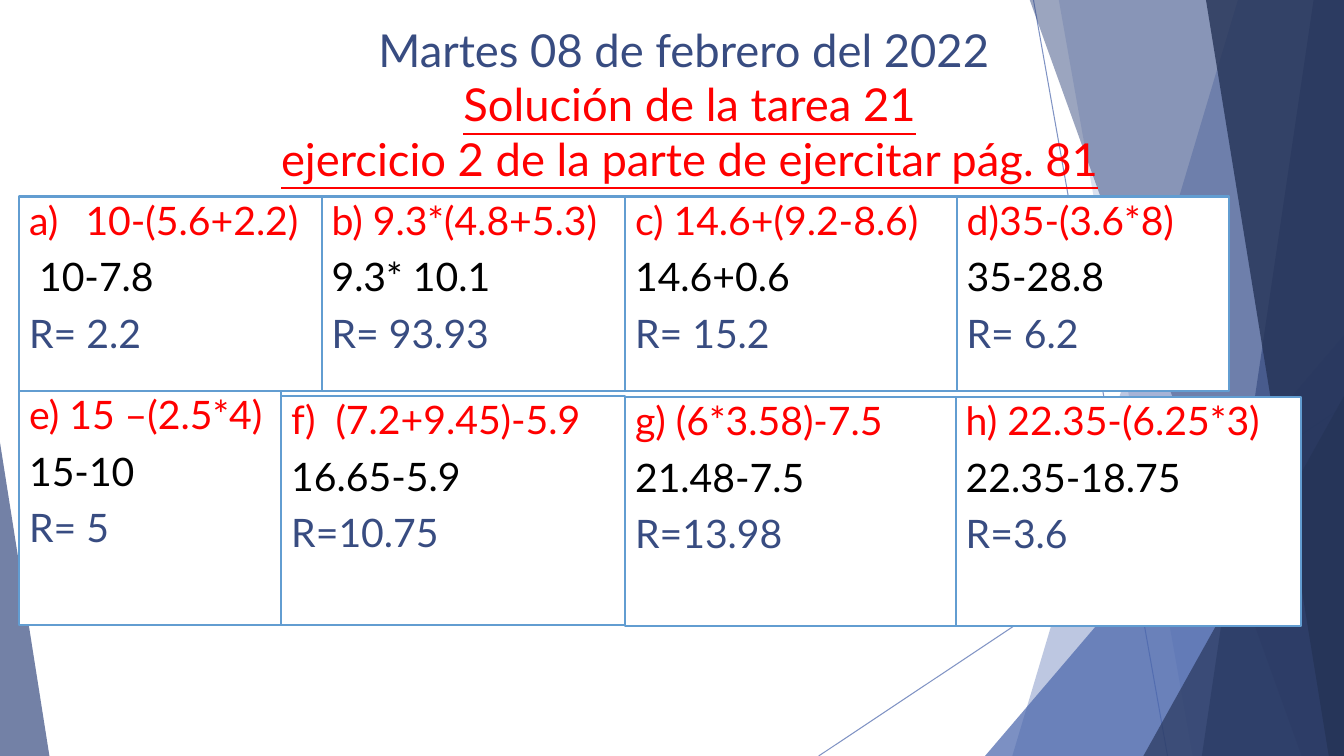
from dataclasses import dataclass
from itertools import pairwise

from lxml.etree import SubElement
from pptx import Presentation
from pptx.dml.color import RGBColor
from pptx.enum.shapes import MSO_CONNECTOR, MSO_SHAPE
from pptx.enum.text import MSO_ANCHOR, MSO_AUTO_SIZE, PP_ALIGN
from pptx.oxml.ns import qn
from pptx.util import Inches, Pt


@dataclass(frozen=True)
class Theme:
    font: str = "Lato"
    title_size: float = 32.4
    body_size: float = 28
    blue: str = "4A66AC"
    dark_blue: str = "384C81"
    navy: str = "253356"
    border: str = "629DD1"
    red: str = "FF0000"
    black: str = "000000"
    white: str = "FFFFFF"


THEME = Theme()
WIDTH, HEIGHT = 13.33, 7.5
BAND_TOP = -0.01

UPPER_EDGES = [0.19, 3.19, 6.2, 9.49, 12.19]
UPPER_EXERCISES = [
    (1.95, 3.88, ["10-(5.6+2.2)", " 10-7.8", "R= 2.2"]),
    (1.95, 3.88, ["b) 9.3*(4.8+5.3)", "9.3* 10.1", "R= 93.93"]),
    (1.95, 3.88, ["c) 14.6+(9.2-8.6)", "14.6+0.6", "R= 15.2"]),
    (1.95, 3.88, ["d)35-(3.6*8)", "35-28.8", "R= 6.2"]),
]
LOWER_EDGES = [0.19, 2.79, 6.2, 9.48, 12.9]
LOWER_EXERCISES = [
    (3.88, 6.2, ["e) 15 –(2.5*4)", "15-10", "R= 5"]),
    (3.93, 6.2, ["f)  (7.2+9.45)-5.9", "16.65-5.9", "R=10.75"]),
    (3.94, 6.21, ["g) (6*3.58)-7.5", "21.48-7.5", "R=13.98"]),
    (3.94, 6.21, ["h) 22.35-(6.25*3)", "22.35-18.75", "R=3.6"]),
]


def set_alpha(fill_parent, percent):
    color = fill_parent.find(".//" + qn("a:srgbClr"))
    SubElement(color, qn("a:alpha"), val=str(percent * 1000))


def fill_translucent(shape, color, percent):
    shape.shadow.inherit = False
    shape.fill.solid()
    shape.fill.fore_color.rgb = RGBColor.from_string(color)
    shape.line.fill.background()
    set_alpha(shape.element.spPr, percent)


def add_thin_line(page, start, end):
    line = page.shapes.add_connector(
        MSO_CONNECTOR.STRAIGHT, *(Inches(value) for value in start + end))
    line.line.color.rgb = RGBColor.from_string(THEME.blue)
    line.line.width = Pt(0.75)
    set_alpha(line.element.spPr, 70)
    SubElement(line.element.spPr, qn("a:effectLst"))


def add_band(page, top_left, bottom_left, color, percent):
    points = [(WIDTH, BAND_TOP), (WIDTH, HEIGHT), (bottom_left, HEIGHT)]
    builder = page.shapes.build_freeform(Inches(top_left), Inches(BAND_TOP))
    builder.add_line_segments(
        [(Inches(x), Inches(y)) for x, y in points], close=True)
    fill_translucent(builder.convert_to_shape(), color, percent)


def add_triangle(page, left, top, width, apex, color, percent):
    triangle = page.shapes.add_shape(
        MSO_SHAPE.ISOSCELES_TRIANGLE, Inches(left), Inches(top),
        Inches(width), Inches(HEIGHT - top))
    triangle.adjustments[0] = apex
    fill_translucent(triangle, color, percent)


def add_decoration(page):
    add_thin_line(page, (10.25, 0), (11.58, HEIGHT))
    add_thin_line(page, (WIDTH, 4.03), (8.12, HEIGHT))
    add_band(page, 12.28, 10.04, THEME.blue, 36)
    add_band(page, 10.5, 11.83, THEME.blue, 20)
    add_triangle(page, 9.77, 3.33, 3.56, 1, THEME.blue, 72)
    add_band(page, 10.21, 12.91, THEME.dark_blue, 50)
    add_band(page, 13.03, 11.92, THEME.dark_blue, 70)
    add_band(page, 11.96, 13.18, THEME.navy, 80)
    add_triangle(page, 11.34, 3.93, 1.99, 1, THEME.navy, 66)
    add_triangle(page, 0, 4.39, 0.49, 0, THEME.dark_blue, 70)


def add_span(para, text, size, color, underline=None):
    span = para.add_run()
    span.text = text
    span.font.name = THEME.font
    span.font.size = Pt(size)
    span.font.color.rgb = RGBColor.from_string(color)
    span.font.underline = underline


def number_with_letter(para):
    properties = para._p.get_or_add_pPr()
    properties.set("marL", str(Inches(0.56)))
    properties.set("indent", str(-Inches(0.56)))
    SubElement(properties, qn("a:buAutoNum"), type="alphaLcParenR")


def add_exercise(page, left, right, top, bottom, steps):
    box = page.shapes.add_shape(
        MSO_SHAPE.RECTANGLE, Inches(left), Inches(top),
        Inches(right - left), Inches(bottom - top))
    box.shadow.inherit = False
    box.fill.solid()
    box.fill.fore_color.rgb = RGBColor.from_string(THEME.white)
    box.line.color.rgb = RGBColor.from_string(THEME.border)
    box.line.width = Pt(1.5)
    frame = box.text_frame
    frame.word_wrap = True
    frame.vertical_anchor = MSO_ANCHOR.TOP
    colors = [THEME.red, THEME.black, THEME.dark_blue]
    for index, (step, color) in enumerate(zip(steps, colors)):
        para = frame.add_paragraph() if index else frame.paragraphs[0]
        para.alignment = PP_ALIGN.LEFT
        para.line_spacing = 0.9
        para.space_before = Pt(10)
        add_span(para, step, THEME.body_size, color)
    return box


def add_exercise_row(page, edges, exercises):
    return [add_exercise(page, left, right, *exercise)
            for (left, right), exercise in zip(pairwise(edges), exercises)]


def format_title(page):
    title = page.shapes.title
    title.left, title.top = Inches(2.14), Inches(0.17)
    title.width, title.height = Inches(9.4), Inches(1.44)
    frame = title.text_frame
    frame.word_wrap = True
    frame.auto_size = MSO_AUTO_SIZE.NONE
    frame.vertical_anchor = MSO_ANCHOR.TOP
    para = frame.paragraphs[0]
    para.alignment = PP_ALIGN.CENTER
    add_span(para, "Martes 08 de febrero del 2022 ",
             THEME.title_size, THEME.dark_blue)
    for text in ("Solución de la tarea 21",
                 "ejercicio 2 de la parte de ejercitar pág. 81"):
        para.add_line_break()
        add_span(para, text, THEME.title_size, THEME.red, underline=True)
    title.element.getparent().append(title.element)


def main():
    deck = Presentation()
    deck.slide_width, deck.slide_height = Inches(WIDTH), Inches(HEIGHT)
    page = deck.slides.add_slide(deck.slide_layouts.get_by_name("Title Only"))
    add_decoration(page)
    upper_boxes = add_exercise_row(page, UPPER_EDGES, UPPER_EXERCISES)
    number_with_letter(upper_boxes[0].text_frame.paragraphs[0])
    add_exercise_row(page, LOWER_EDGES, LOWER_EXERCISES)
    format_title(page)
    deck.save("out.pptx")


if __name__ == "__main__":
    main()
